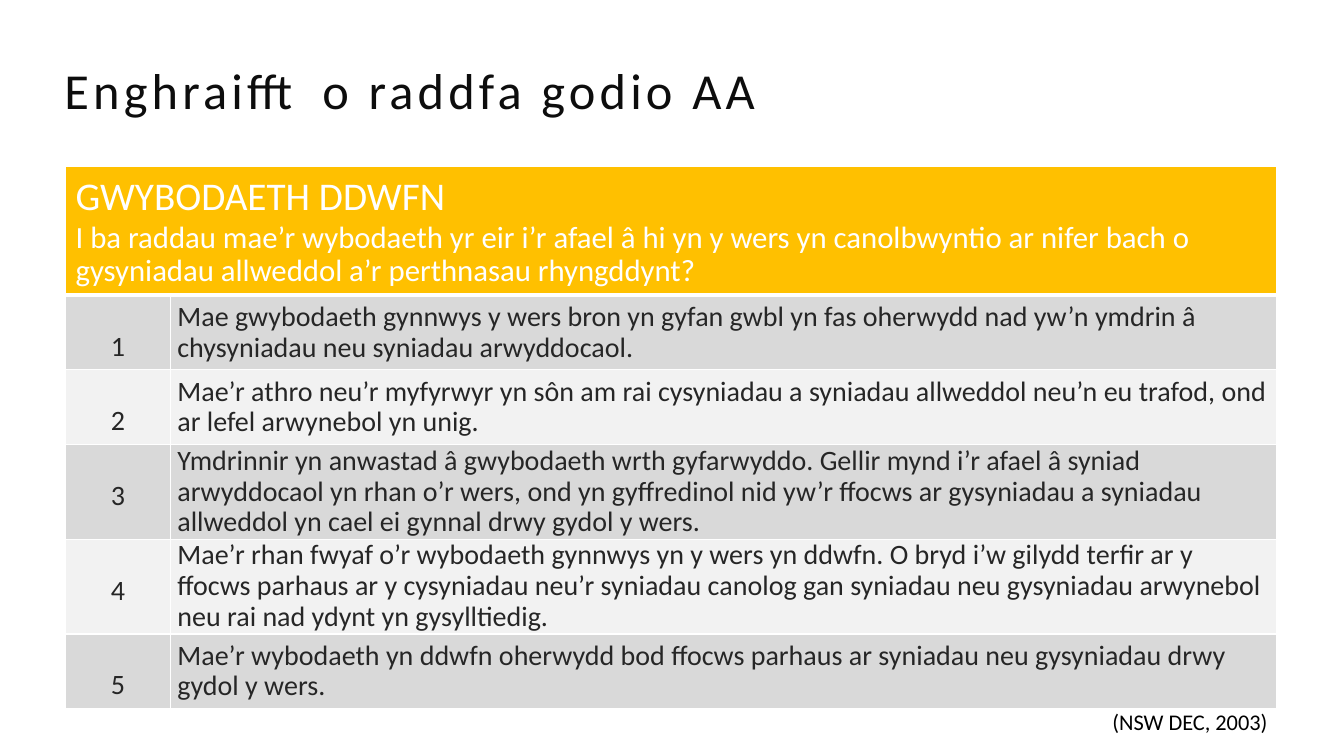
from pptx import Presentation
from pptx.dml.color import RGBColor
from pptx.enum.text import MSO_ANCHOR, PP_ALIGN
from pptx.oxml.ns import qn
from pptx.util import Inches, Pt
from lxml import etree

LEFT, CENTER, RIGHT = PP_ALIGN.LEFT, PP_ALIGN.CENTER, PP_ALIGN.RIGHT
TOP, MIDDLE = MSO_ANCHOR.TOP, MSO_ANCHOR.MIDDLE

TITLE = "Enghraifft o raddfa godio AA"
CATEGORY = "GWYBODAETH DDWFN"
QUESTION = (
    "I ba raddau mae’r wybodaeth yr eir i’r afael â hi yn y wers yn "
    "canolbwyntio ar nifer bach o gysyniadau allweddol a’r perthnasau rhyngddynt?"
)
LEVELS = [
    (0.74, "Mae gwybodaeth gynnwys y wers bron yn gyfan gwbl yn fas oherwydd "
           "nad yw’n ymdrin â chysyniadau neu syniadau arwyddocaol."),
    (0.74, "Mae’r athro neu’r myfyrwyr yn sôn am rai cysyniadau a syniadau "
           "allweddol neu’n eu trafod, ond ar lefel arwynebol yn unig."),
    (0.94, "Ymdrinnir yn anwastad â gwybodaeth wrth gyfarwyddo. Gellir mynd i’r "
           "afael â syniad arwyddocaol yn rhan o’r wers, ond yn gyffredinol nid "
           "yw’r ffocws ar gysyniadau a syniadau allweddol yn cael ei gynnal "
           "drwy gydol y wers."),
    (0.94, "Mae’r rhan fwyaf o’r wybodaeth gynnwys yn y wers yn ddwfn. O bryd "
           "i’w gilydd terfir ar y ffocws parhaus ar y cysyniadau neu’r syniadau "
           "canolog gan syniadau neu gysyniadau arwynebol neu rai nad ydynt yn "
           "gysylltiedig."),
    (0.74, "Mae’r wybodaeth yn ddwfn oherwydd bod ffocws parhaus ar syniadau "
           "neu gysyniadau drwy gydol y wers."),
]
CITATION = "(NSW DEC, 2003)"
HEADER_HEIGHT = 1.28
COLUMNS = (1.04, 10.97)

THEME = {
    "font": "Calibri",
    "title": "0D0D0D", "header_text": "FFFFFF", "body": "262626",
    "citation": "000000", "header_fill": "FFC000", "border": "FFFFFF",
    "bands": ("D9D9D9", "F2F2F2"),
    "title_size": 36, "category_size": 28, "question_size": 22,
    "body_size": 20, "citation_size": 16,
}


def write(paragraph, text, *, size, color, align=LEFT, line=1.0, tracking=0):
    paragraph.alignment = align
    paragraph.line_spacing = line
    run = paragraph.add_run()
    run.text = text
    run.font.name = THEME["font"]
    run.font.size = Pt(size)
    run.font.color.rgb = RGBColor.from_string(color)
    if tracking:
        run.font._element.set("spc", str(tracking * 100))


def add_text(slide, box, text, **fmt):
    frame = slide.shapes.add_textbox(*map(Inches, box)).text_frame
    frame.word_wrap = True
    write(frame.paragraphs[0], text, **fmt)


def style_cell(cell, fill, anchor, margins, bottom=1):
    cell.vertical_anchor = anchor
    cell.margin_left = cell.margin_right = Inches(margins[0])
    cell.margin_top = cell.margin_bottom = Inches(margins[1])
    properties = cell._tc.get_or_add_tcPr()
    for side, width in (("L", 1), ("R", 1), ("T", 1), ("B", bottom)):
        edge = etree.SubElement(properties, qn("a:ln" + side), w=str(Pt(width)))
        paint = etree.SubElement(edge, qn("a:solidFill"))
        etree.SubElement(paint, qn("a:srgbClr"), val=THEME["border"])
    cell.fill.solid()
    cell.fill.fore_color.rgb = RGBColor.from_string(fill)


def add_scale(slide):
    heights = [HEADER_HEIGHT] + [height for height, _ in LEVELS]
    box = (0.65, 1.65, sum(COLUMNS), sum(heights))
    scale = slide.shapes.add_table(
        len(heights), len(COLUMNS), *map(Inches, box)).table
    for column, width in zip(scale.columns, COLUMNS):
        column.width = Inches(width)
    for row, height in zip(scale.rows, heights):
        row.height = Inches(height)

    header = scale.cell(0, 0)
    header.merge(scale.cell(0, 1))
    for part in (header, scale.cell(0, 1)):
        style_cell(part, THEME["header_fill"], MIDDLE, (0.1, 0.05), bottom=3)
    write(header.text_frame.paragraphs[0], CATEGORY,
          size=THEME["category_size"], color=THEME["header_text"])
    write(header.text_frame.add_paragraph(), QUESTION,
          size=THEME["question_size"], color=THEME["header_text"], line=0.9)

    for level, (_, description) in enumerate(LEVELS, start=1):
        band = THEME["bands"][(level - 1) % 2]
        entries = ((str(level), TOP, CENTER, 2.0), (description, MIDDLE, LEFT, 0.9))
        for column, (text, anchor, align, line) in enumerate(entries):
            cell = scale.cell(level, column)
            style_cell(cell, band, anchor, (0.07, 0))
            write(cell.text_frame.paragraphs[0], text, size=THEME["body_size"],
                  color=THEME["body"], align=align, line=line)


def main():
    deck = Presentation()
    deck.slide_width, deck.slide_height = Inches(13.33), Inches(7.5)
    slide = deck.slides.add_slide(deck.slide_layouts[6])
    add_scale(slide)
    add_text(slide, (10.62, 7.01, 2.05, 0.35), CITATION, align=RIGHT, line=0.9,
             size=THEME["citation_size"], color=THEME["citation"])
    add_text(slide, (0.54, 0.63, 11.89, 0.62), TITLE, line=0.85, tracking=3,
             size=THEME["title_size"], color=THEME["title"])
    deck.save("out.pptx")


if __name__ == "__main__":
    main()
